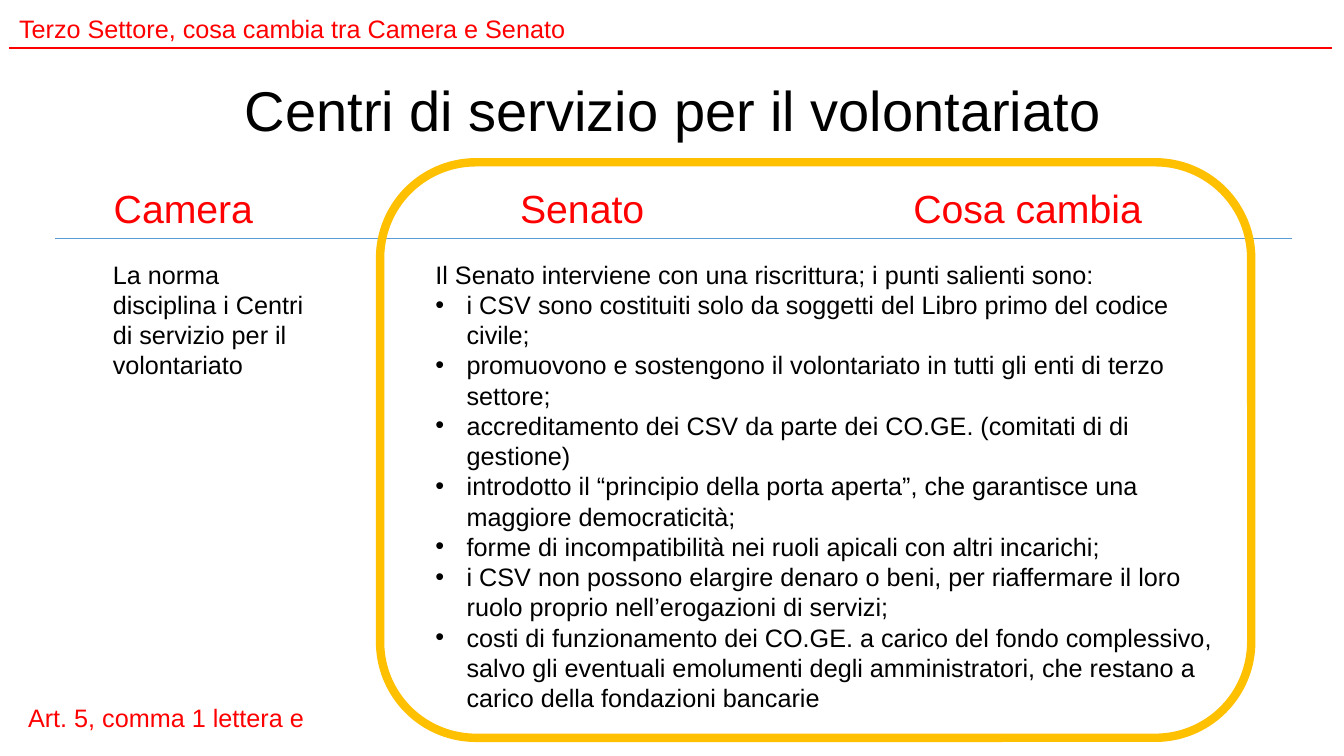
from pptx import Presentation
from pptx.dml.color import RGBColor
from pptx.enum.shapes import MSO_CONNECTOR as CONNECTOR, MSO_SHAPE as SHAPE
from pptx.enum.text import MSO_ANCHOR as ANCHOR, PP_ALIGN as ALIGN
from pptx.oxml.ns import qn
from pptx.util import Inches, Pt
from lxml import etree

RED, BLACK, BLUE, AMBER = "FF0000", "000000", "5B9BD5", "FFC000"
SENATE_POINTS = [
    "i CSV sono costituiti solo da soggetti del Libro primo del codice civile;",
    "promuovono e sostengono il volontariato in tutti gli enti di terzo settore;",
    "accreditamento dei CSV da parte dei CO.GE. (comitati di di gestione)",
    "introdotto il “principio della porta aperta”, che garantisce una maggiore democraticità;",
    "forme di incompatibilità nei ruoli apicali con altri incarichi;",
    "i CSV non possono elargire denaro o beni, per riaffermare il loro ruolo proprio "
    "nell’erogazioni di servizi;",
    "costi di funzionamento dei CO.GE. a carico del fondo complessivo, salvo gli eventuali "
    "emolumenti degli amministratori, che restano a carico della fondazioni bancarie",
]


def color(hex_code):
    return RGBColor.from_string(hex_code)


def add_text(slide, box, lines, size=18, ink=BLACK, wrap=True):
    frame = slide.shapes.add_textbox(*map(Inches, box)).text_frame
    frame.word_wrap = wrap
    frame.text = "\n".join(lines)
    for paragraph in frame.paragraphs:
        paragraph.font.name = "Arial"
        paragraph.font.size = Pt(size)
        paragraph.font.color.rgb = color(ink)
    return frame


def add_rule(slide, left, right, y, ink, weight):
    rule = slide.shapes.add_connector(
        CONNECTOR.STRAIGHT, Inches(left), Inches(y), Inches(right), Inches(y))
    rule.line.color.rgb = color(ink)
    rule.line.width = Pt(weight)
    etree.SubElement(rule._element.spPr, qn("a:effectLst"))


def add_bullet(paragraph, indent):
    properties = paragraph._p.get_or_add_pPr()
    properties.set("marL", str(Inches(indent)))
    properties.set("indent", str(-Inches(indent)))
    etree.SubElement(properties, qn("a:buFont"), typeface="Arial")
    etree.SubElement(properties, qn("a:buChar"), char="•")


def add_banner(slide, left, top, width, height):
    add_text(slide, (left, top, 5.68, height),
             ["Terzo Settore, cosa cambia tra Camera e Senato"], ink=RED, wrap=False)
    add_rule(slide, left, left + width, top + height, RED, 1.5)


def add_title(slide, box):
    title = add_text(slide, box, ["Centri di servizio per il volontariato"], 40)
    title.vertical_anchor = ANCHOR.MIDDLE
    title.paragraphs[0].alignment = ALIGN.CENTER
    title.paragraphs[0].line_spacing = 0.9


def add_column_headings(slide, left, top, width, height):
    for offset, heading_width, heading in [
            (0.48, 1.6, "Camera"), (4.51, 1.45, "Senato"), (8.41, 2.5, "Cosa cambia")]:
        add_text(slide, (left + offset, top, heading_width, height),
                 [heading], 28, RED, wrap=False)
    add_rule(slide, left, left + width, top + height, BLUE, 0.5)


def add_senate_panel(slide, left, top, width, height):
    senate = add_text(
        slide, (left + 0.45, top + 0.91, width - 0.62, height - 1.07),
        ["Il Senato interviene con una riscrittura; i punti salienti sono:", *SENATE_POINTS])
    for paragraph in senate.paragraphs[1:]:
        add_bullet(paragraph, 0.31)

    # Rounded frame around the Senate columns
    outline = slide.shapes.add_shape(
        SHAPE.ROUNDED_RECTANGLE, *map(Inches, (left, top, width, height)))
    outline.shadow.inherit = False
    outline.fill.background()
    outline.line.color.rgb = color(AMBER)
    outline.line.width = Pt(6)


def main():
    deck = Presentation()
    deck.slide_width, deck.slide_height = Inches(13.33), Inches(7.5)
    slide = deck.slides.add_slide(deck.slide_layouts[6])

    # Header
    add_banner(slide, 0.09, 0.08, 13.12, 0.4)
    add_title(slide, (0.92, 0.4, 11.5, 1.45))

    # Comparison
    add_column_headings(slide, 0.55, 1.78, 12.26, 0.58)
    add_text(slide, (1.02, 2.52, 2.31, 1.31),
             ["La norma disciplina i Centri di servizio per il volontariato"])
    add_senate_panel(slide, 3.77, 1.61, 8.64, 5.71)

    # Article reference
    add_text(slide, (0.18, 6.92, 3.05, 0.4),
             ["Art. 5, comma 1 lettera e"], ink=RED, wrap=False)
    deck.save("out.pptx")


if __name__ == "__main__":
    main()
